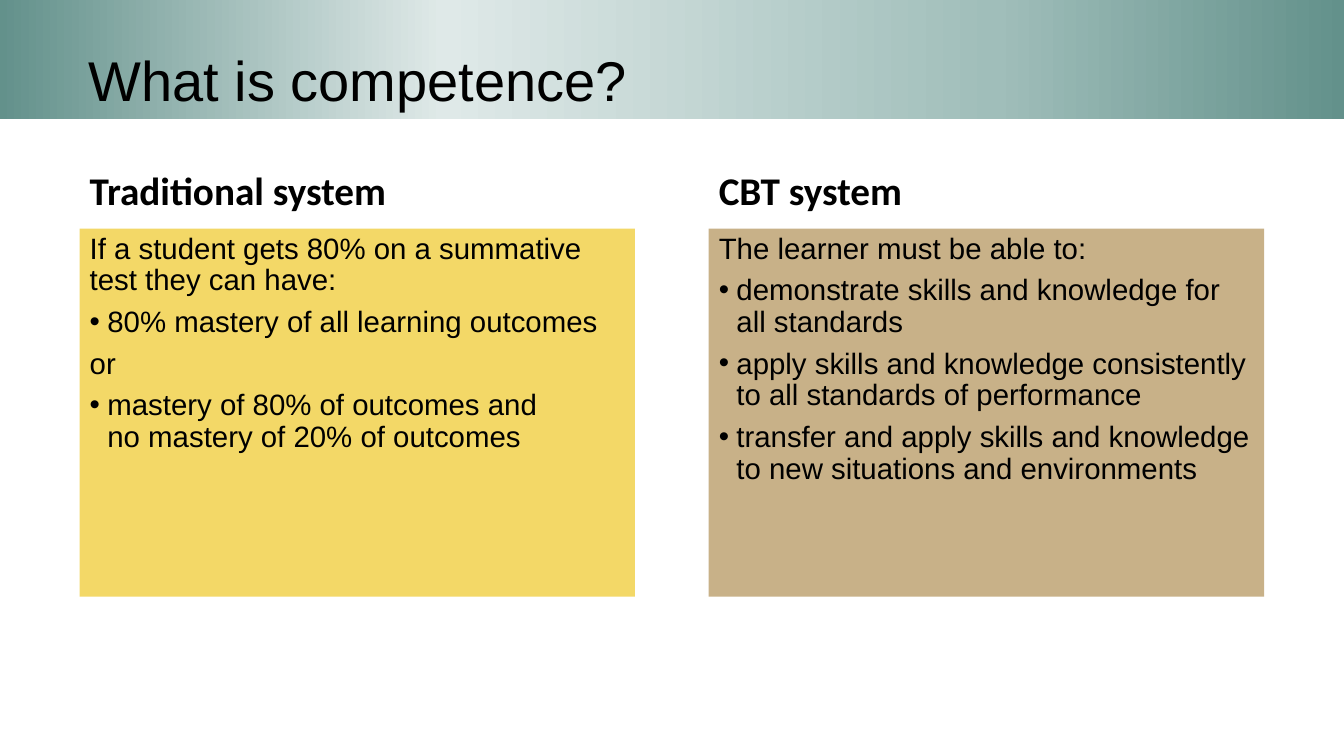
from lxml.etree import SubElement
from pptx import Presentation
from pptx.dml.color import RGBColor
from pptx.enum.text import MSO_ANCHOR, MSO_AUTO_SIZE, PP_ALIGN
from pptx.oxml.ns import qn
from pptx.util import Pt

BLACK = RGBColor(0x00, 0x00, 0x00)
TEAL = RGBColor(0x63, 0x91, 0x8B)
PALE_TEAL = RGBColor(0xDF, 0xE9, 0xE8)
MID_TEAL = RGBColor(0xA0, 0xBE, 0xBA)
YELLOW = RGBColor(0xF3, 0xD8, 0x67)
TAN = RGBColor(0xC8, 0xB1, 0x88)

BANNER_STOPS = [(0, TEAL), (33, PALE_TEAL), (74, MID_TEAL), (100, TEAL)]
HEADING_HEIGHT = 55.4
HEADING_GAP = 7.2
BULLET_INDENT = 12.6

TRADITIONAL = [
    ("If a student gets 80% on a summative test they can have:", False),
    ("80% mastery of all learning outcomes", True),
    ("or", False),
    ("mastery of 80% of outcomes and\nno mastery of 20% of outcomes", True),
]
CBT = [
    ("The learner must be able to:", False),
    ("demonstrate skills and knowledge for all standards", True),
    ("apply skills and knowledge consistently to all standards of performance", True),
    ("transfer and apply skills and knowledge to new situations and environments", True),
]


def place(box, left, top, width, height, anchor):
    """Move a placeholder and fix how its text sits."""
    box.left, box.top = Pt(left), Pt(top)
    box.width, box.height = Pt(width), Pt(height)
    frame = box.text_frame
    frame.word_wrap = True
    frame.auto_size = MSO_AUTO_SIZE.NONE
    frame.vertical_anchor = anchor


def write(para, text, size, font, bold=False, bullet=False, before=0, indent=0):
    """Fill one paragraph, with a line break at each newline."""
    para.alignment = PP_ALIGN.LEFT
    para.line_spacing = 0.9
    para.space_before = Pt(before)
    para.space_after = Pt(0)
    properties = para._p.get_or_add_pPr()
    properties.set("marL", str(Pt(BULLET_INDENT if bullet else indent)))
    properties.set("indent", str(Pt(-BULLET_INDENT if bullet else 0)))
    if bullet:
        SubElement(properties, qn("a:buFont"), typeface="Arial")
        SubElement(properties, qn("a:buChar"), char="•")
    else:
        SubElement(properties, qn("a:buNone"))
    for number, line in enumerate(text.split("\n")):
        if number:
            para.add_line_break()
        span = para.add_run()
        span.text = line
        span.font.name = font
        span.font.size = Pt(size)
        span.font.bold = bold
        span.font.color.rgb = BLACK


def add_banner(box, left, top, width, height, text):
    """Set the title on a band with a horizontal gradient."""
    place(box, left, top, width, height, MSO_ANCHOR.BOTTOM)
    box.fill.gradient()
    box.fill.gradient_angle = 0
    stops = box._element.spPr.find(qn("a:gradFill")).find(qn("a:gsLst"))
    for stop in list(stops):
        stops.remove(stop)
    for position, color in BANNER_STOPS:
        stop = SubElement(stops, qn("a:gs"), pos=str(position * 1000))
        SubElement(stop, qn("a:srgbClr"), val=str(color))
    write(box.text_frame.paragraphs[0], text, 40, "Arial", indent=56.16)


def add_column(heading, body, left, top, width, height, title, items, color):
    """Set a bold heading above a filled panel of paragraphs."""
    place(heading, left, top, width, HEADING_HEIGHT, MSO_ANCHOR.BOTTOM)
    write(heading.text_frame.paragraphs[0], title, 28, "Calibri", bold=True)
    offset = HEADING_HEIGHT + HEADING_GAP
    place(body, left, top + offset, width, height - offset, MSO_ANCHOR.TOP)
    body.fill.solid()
    body.fill.fore_color.rgb = color
    frame = body.text_frame
    for number, (text, bullet) in enumerate(items):
        para = frame.add_paragraph() if number else frame.paragraphs[0]
        write(para, text, 21, "Arial", bullet=bullet, before=7 if number else 0)


def main():
    """Build the comparison slide and save it."""
    deck = Presentation()
    deck.slide_width, deck.slide_height = Pt(960), Pt(540)
    page = deck.slides.add_slide(deck.slide_layouts[4])
    title, *columns = page.placeholders
    add_banner(title, 0, 0, 960, 85, "What is competence?")
    add_column(*columns[:2], 56.9, 100.8, 396.7, 325.4, "Traditional system", TRADITIONAL, YELLOW)
    add_column(*columns[2:], 506.2, 100.8, 396.7, 325.4, "CBT system", CBT, TAN)
    deck.save("out.pptx")


if __name__ == "__main__":
    main()
